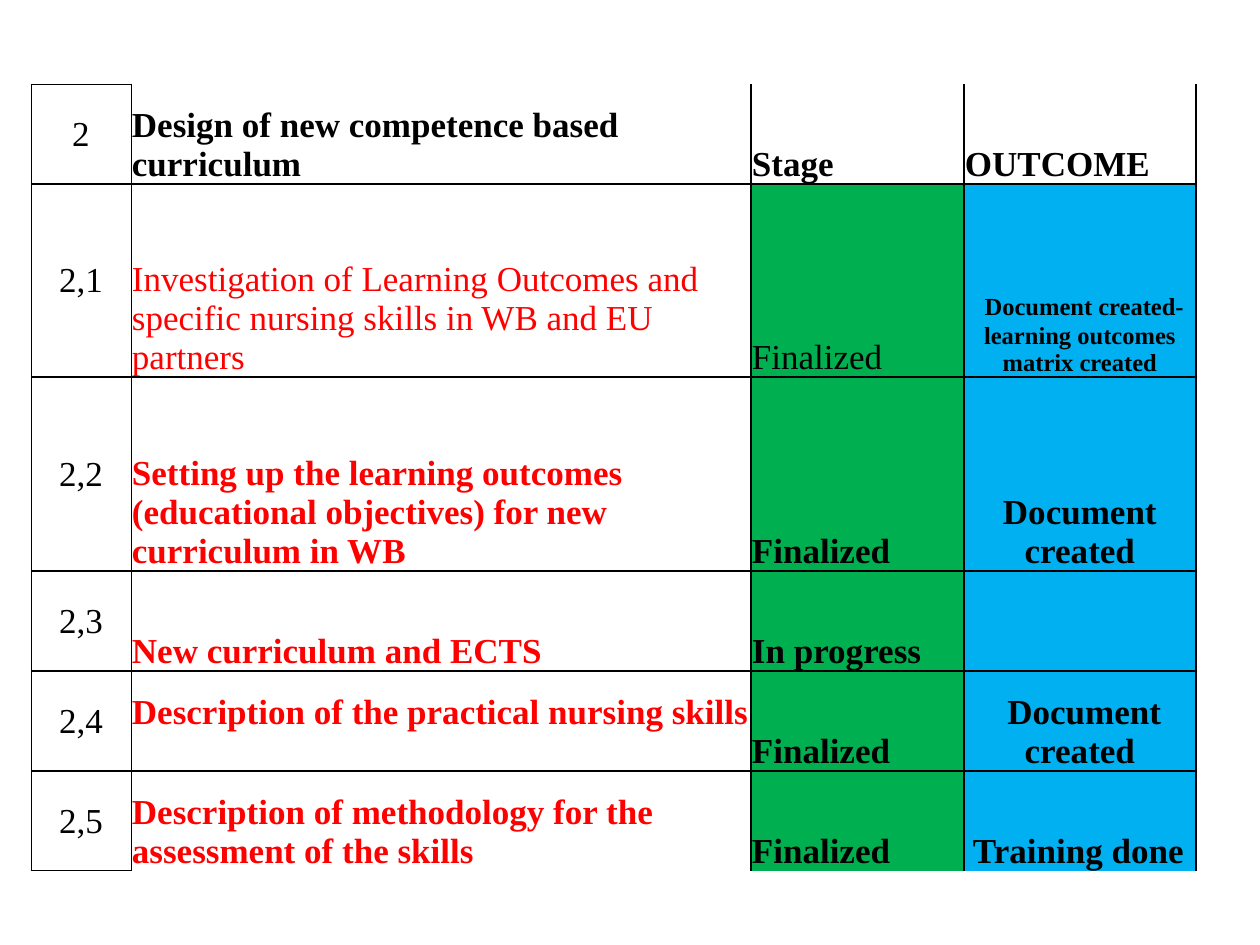
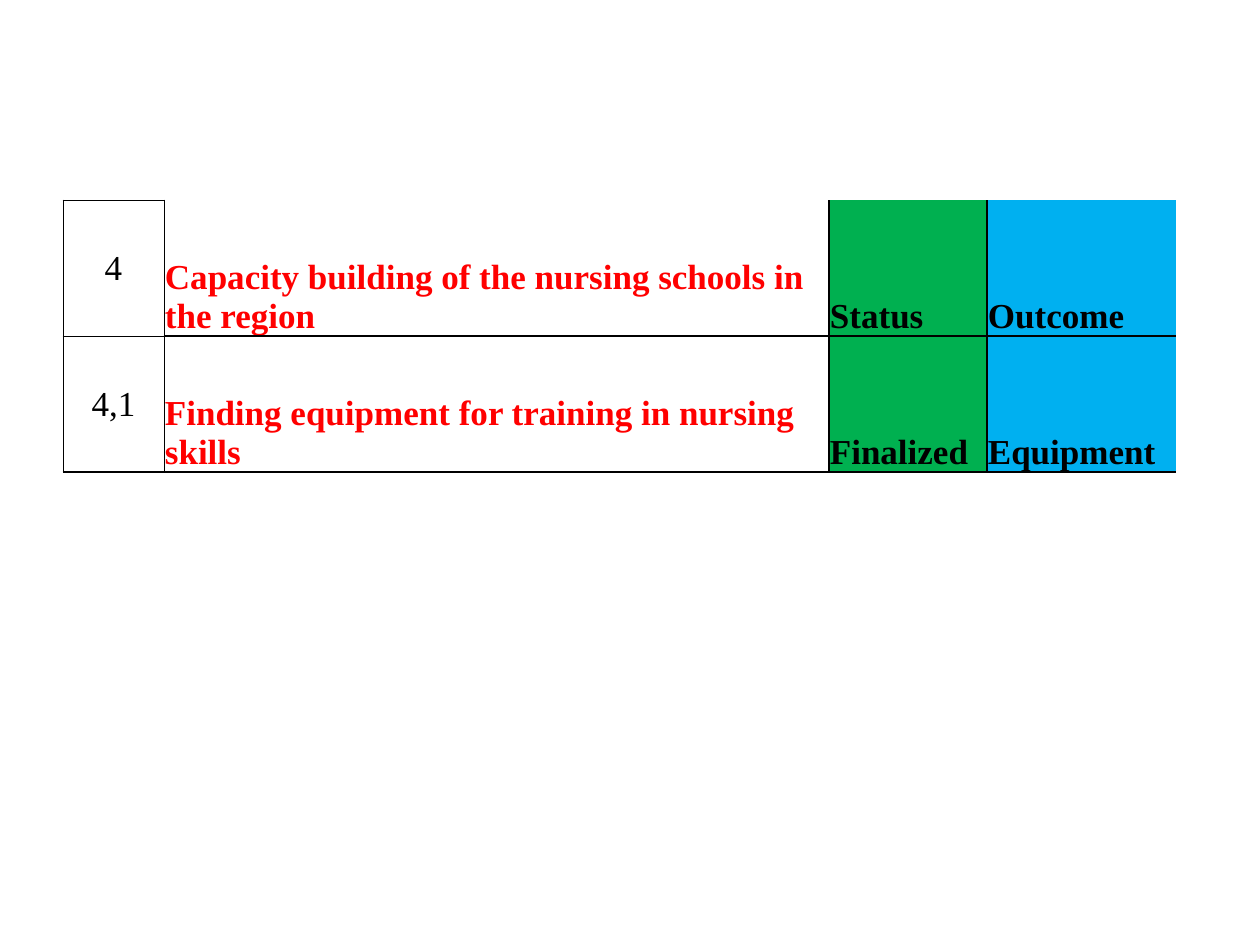
"""Build two project status tables on nursing curriculum work packages."""
from lxml.etree import SubElement
from pptx import Presentation
from pptx.dml.color import RGBColor
from pptx.enum.text import MSO_ANCHOR, PP_ALIGN
from pptx.oxml.ns import qn
from pptx.util import Pt

PX = 914400 // 126
FONT = "Times New Roman"
COLOURS = {"ink": "000000", "task": "FF0000", "stage": "00B050", "outcome": "00B0F0"}
FILLS = {2: "stage", 3: "outcome"}

work_packages = [
    {
        "left": 31, "top": 84,
        "columns": [100, 620, 213, 232],
        "heights": [100, 193, 194, 100, 100, 100],
        "plain_header": True, "regular_row": 1,
        "open_side": "B", "number_rule": 1, "number_end": 0.5,
        "centred_outcomes": [1, 2, 4],
        "rows": [
            ("2", "Design of new competence based curriculum", "Stage", "OUTCOME"),
            ("2,1", "Investigation of Learning Outcomes and specific nursing skills in WB and EU partners",
             "Finalized", " "),
            ("2,2", "Setting up the learning outcomes (educational objectives) for new curriculum in WB",
             "Finalized", "Document created"),
            ("2,3", "New curriculum and ECTS", "In progress", ""),
            ("2,4", "Description of the practical nursing skills", "Finalized", " Document created"),
            ("2,5", "Description of methodology for the assessment of the skills",
             "Finalized", " Training done"),
        ],
    },
    {
        "left": 63, "top": 200,
        "columns": [101, 665, 158, 189],
        "heights": [136, 136],
        "plain_header": False, "regular_row": None,
        "open_side": "R", "number_rule": 0.5, "number_end": 1,
        "centred_outcomes": [],
        "rows": [
            ("4", "Capacity building of the nursing schools in the region", "Status", "Outcome"),
            ("4,1", "Finding equipment for training in nursing skills", "Finalized", "Equipment"),
        ],
    },
]


def style_run(run, colour, bold, size=20):
    run.font.name = FONT
    run.font.size = Pt(size)
    run.font.bold = bold
    run.font.color.rgb = RGBColor.from_string(COLOURS[colour])


def draw_border(cell, side, width):
    line = SubElement(cell._tc.get_or_add_tcPr(), qn(f"a:ln{side}"), w=str(Pt(width)))
    if width:
        ink = SubElement(line, qn("a:solidFill"))
        SubElement(ink, qn("a:srgbClr"), val=COLOURS["ink"])
    else:
        SubElement(line, qn("a:noFill"))


prs = Presentation()
prs.slide_width = 1260 * PX
prs.slide_height = 945 * PX
status_tables = []

for package in work_packages:
    slide = prs.slides.add_slide(prs.slide_layouts[6])
    rows, columns, heights = package["rows"], package["columns"], package["heights"]
    table = slide.shapes.add_table(
        len(rows), len(columns), package["left"] * PX, package["top"] * PX,
        sum(columns) * PX, sum(heights) * PX).table
    table.first_row = False
    table.horz_banding = False
    for column, width in zip(table.columns, columns):
        column.width = width * PX
    for row, height in zip(table.rows, heights):
        row.height = height * PX
    last_row, last_column = len(rows) - 1, len(columns) - 1

    for r, entries in enumerate(rows):
        for c, text in enumerate(entries):
            cell = table.cell(r, c)
            is_number = c == 0
            plain = r == 0 and package["plain_header"]
            cell.margin_left = cell.margin_right = cell.margin_top = PX
            cell.margin_bottom = 0
            cell.vertical_anchor = MSO_ANCHOR.MIDDLE if is_number else MSO_ANCHOR.BOTTOM

            inner = package["number_rule"] if is_number else 1
            end = package["number_end"] if is_number else 1
            borders = {
                "L": 0.5 if c <= 1 else 1,
                "R": 0.5 if is_number else 1,
                "T": inner if r else (0.5 if is_number else 0),
                "B": end if r == last_row else inner,
            }
            if package["open_side"] == "B" and r == last_row and not is_number:
                borders["B"] = 0
            if package["open_side"] == "R" and c == last_column:
                borders["R"] = 0
            for side, width in borders.items():
                draw_border(cell, side, width)

            if c in FILLS and not plain:
                cell.fill.solid()
                cell.fill.fore_color.rgb = RGBColor.from_string(COLOURS[FILLS[c]])
            else:
                cell.fill.background()

            cell.text_frame.text = text
            paragraph = cell.text_frame.paragraphs[0]
            centred = is_number or (c == 3 and r in package["centred_outcomes"])
            paragraph.alignment = PP_ALIGN.CENTER if centred else PP_ALIGN.LEFT
            colour = "task" if c == 1 and not plain else "ink"
            bold = not is_number and r != package["regular_row"]
            for run in paragraph.runs:
                style_run(run, colour, bold)
    status_tables.append(table)

curriculum = status_tables[0]
matrix_note = curriculum.cell(1, 3).text_frame.paragraphs[0].add_run()
matrix_note.text = "Document created-learning outcomes matrix created"
style_run(matrix_note, "ink", True, 14)
curriculum.cell(4, 1).margin_bottom = 39 * PX

prs.save("out.pptx")
